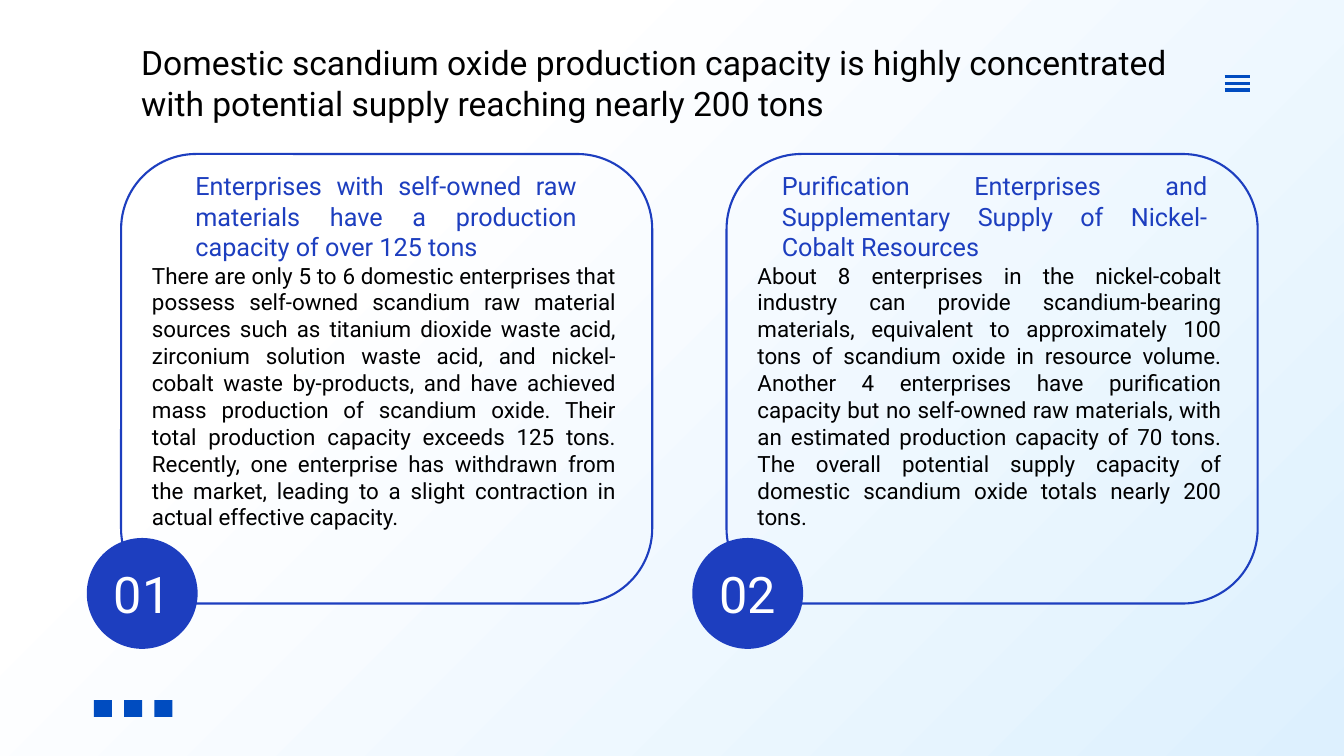
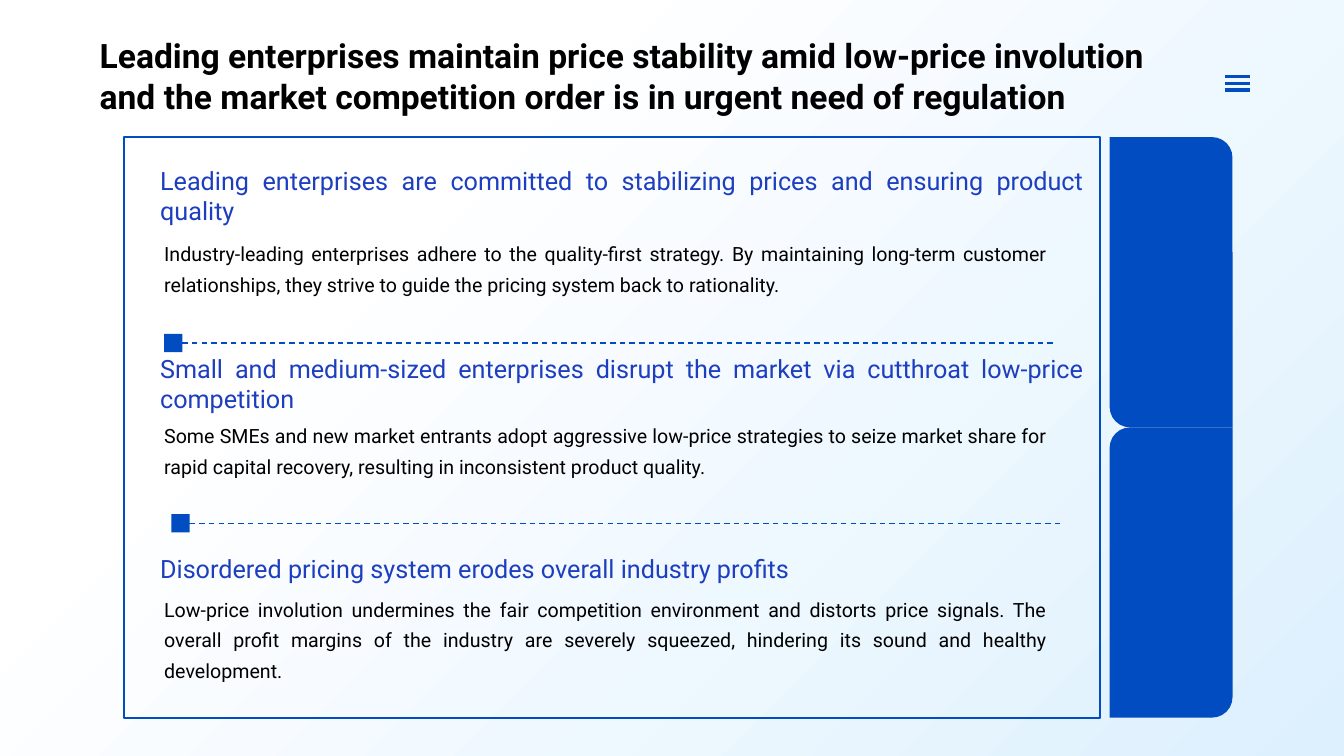
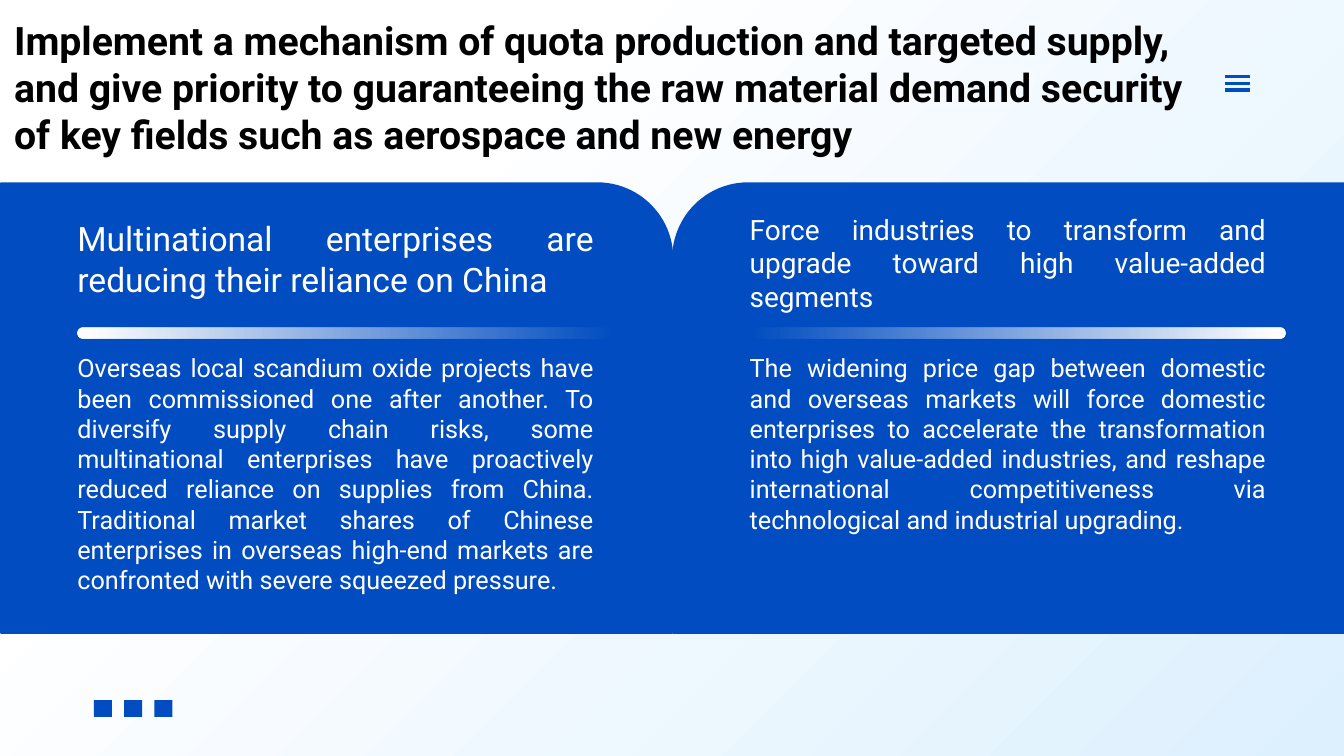
from lxml import etree
from pptx import Presentation
from pptx.dml.color import RGBColor
from pptx.enum.dml import MSO_LINE
from pptx.enum.shapes import MSO_CONNECTOR, MSO_SHAPE
from pptx.enum.text import MSO_ANCHOR, MSO_AUTO_SIZE, PP_ALIGN
from pptx.oxml.ns import qn
from pptx.util import Pt

RECT, OVAL = MSO_SHAPE.RECTANGLE, MSO_SHAPE.OVAL
ROUND, ROUND1 = MSO_SHAPE.ROUNDED_RECTANGLE, MSO_SHAPE.ROUND_1_RECTANGLE
DIAG = MSO_SHAPE.ROUND_2_DIAG_RECTANGLE
STRAIGHT, DASH = MSO_CONNECTOR.STRAIGHT, MSO_LINE.DASH
TOP, MIDDLE = MSO_ANCHOR.TOP, MSO_ANCHOR.MIDDLE
LEFT, CENTER, JUSTIFY = PP_ALIGN.LEFT, PP_ALIGN.CENTER, PP_ALIGN.JUSTIFY
NO_FIT = MSO_AUTO_SIZE.NONE

FONT = "Roboto"
CORNER = 0.167
HEX = {"blue": "004CC0", "royal": "1D3EBF", "sky": "DDF0FE",
       "white": "FFFFFF", "black": "000000"}


def rgb(name):
    return RGBColor.from_string(HEX[name])


def assign(item, values):
    for key, value in values.items():
        setattr(item, key, value)


def place(item, box):
    assign(item, dict(zip(("left", "top", "width", "height"), map(Pt, box))))


def blend(fill, root, stops, angle):
    """Fill with gradient stops given as (percent, colour, opacity percent)."""
    fill.gradient()
    fill.gradient_angle = angle
    track = next(root.iter(qn("a:gsLst")))
    for old in list(track):
        track.remove(old)
    for pos, name, alpha in stops:
        stop = etree.SubElement(track, qn("a:gs"), pos=str(pos * 1000))
        tint = etree.SubElement(stop, qn("a:srgbClr"), val=HEX[name])
        if alpha < 100:
            etree.SubElement(tint, qn("a:alpha"), val=str(alpha * 1000))


def write(frame, text, size, color="black", align=JUSTIFY, anchor=TOP,
          bold=False, spacing=None):
    assign(frame, {"text": text, "word_wrap": True, "auto_size": NO_FIT,
                   "vertical_anchor": anchor})
    for para in frame.paragraphs:
        assign(para, {"alignment": align, "line_spacing": spacing})
        for run in para.runs:
            assign(run.font, {"name": FONT, "size": Pt(size), "bold": bold})
            run.font.color.rgb = rgb(color)


def label(slide, box, text, size, **style):
    write(slide.shapes.add_textbox(*map(Pt, box)).text_frame,
          text, size, **style)


def block(slide, kind, box, fill=None, edge=None, adjust=(), flip=False):
    shape = slide.shapes.add_shape(kind, *map(Pt, box))
    shape.shadow.inherit = False
    for i, value in enumerate(adjust):
        shape.adjustments[i] = value
    if fill:
        shape.fill.solid()
        shape.fill.fore_color.rgb = rgb(fill)
    else:
        shape.fill.background()
    if edge:
        shape.line.color.rgb = rgb(edge)
        shape.line.width = Pt(1.5)
    else:
        shape.line.fill.background()
    if flip:
        next(shape.element.iter(qn("a:xfrm"))).set("flipH", "1")
    return shape


def rule(slide, left, right, y, width, dash=None):
    """Draw a level blue line."""
    link = slide.shapes.add_connector(
        STRAIGHT, Pt(left), Pt(y), Pt(right), Pt(y))
    link.line.color.rgb = rgb("blue")
    assign(link.line, {"width": Pt(width), "dash_style": dash})
    etree.SubElement(link.element.spPr, qn("a:effectLst"))


def start(deck, title, box, size=24, bold=True, dots=True):
    """Add a slide with its title, menu mark and footer dots."""
    slide = deck.slides.add_slide(deck.slide_layouts[5])
    head = slide.shapes.title
    place(head, box)
    write(head.text_frame, title, size, align=LEFT, bold=bold)
    for i in range(3):
        rule(slide, 874.8, 892.8, 54.8 + 4.7 * i, 2.5)
        if dots:
            block(slide, RECT, (67 + 21.6 * i, 500, 13, 12), "blue")
    return slide


def card(slide, box, number, head, inset, span, body):
    """Draw an outlined card with a numbered disc at its lower left."""
    left, top, _, _ = box
    block(slide, ROUND, box, edge="royal", adjust=[CORNER])
    disc = block(slide, OVAL, (left - 24.5, top + 274.3, 79.2, 79.2), "royal")
    frame = disc.text_frame
    assign(frame, {"margin_left": 0, "margin_right": 0})
    write(frame, number, 36, "white", CENTER, MIDDLE)
    label(slide, (left + inset, top + 8, span, 72.7), head, 18,
          color="royal", anchor=MIDDLE)
    label(slide, (left + 15, top + 73.4, 345.6, 201), body, 16)


def point(slide, left, top, tall, gap, head, body):
    """Write a heading and, a gap below its top, a paragraph."""
    label(slide, (left, top, 674, tall), head, 18,
          color="royal", anchor=MIDDLE)
    label(slide, (left + 2.9, top + gap, 645, 51), body, 14, spacing=1.3)


def divide(slide, left, top):
    block(slide, RECT, (left, top, 13, 13), "blue")
    rule(slide, left + 6, left + 635, top + 6.5, 1, DASH)


def tabs(slide, box):
    """Stack two blue tabs, each with two opposite round corners."""
    left, top, width, height = box
    half = height / 2
    for i, adjust in enumerate([(0, CORNER), (CORNER, 0)]):
        block(slide, DIAG, (left, top + i * half, width, half), "blue",
              adjust=adjust)


def panel(slide, box, head, size, rise, tall, body, flip):
    """Draw a filled panel: heading, fading bar and paragraph."""
    left, top, _, _ = box
    block(slide, ROUND1, box, "blue", "blue", [CORNER], flip)
    bar = block(slide, ROUND, (left + 55, top + 103, 382.3, 8),
                adjust=[0.5], flip=flip)
    blend(bar.fill, bar.element,
          [(0, "white", 100), (2, "white", 100), (100, "white", 0)], 0)
    label(slide, (left + 47.5, top + rise, 383, tall), head, size,
          color="white", anchor=MIDDLE)
    label(slide, (left + 47.5, top + 117.4, 383, 203), body, 18,
          color="white")


def supply(deck):
    slide = start(
        deck, "Domestic scandium oxide production capacity is highly "
        "concentrated\nwith potential supply reaching nearly 200 tons",
        (93.6, 26.6, 799, 65.5), bold=False)
    cards = [
        ("01", "Enterprises with self-owned raw materials have a production "
         "capacity of over 125 tons", 46, 286.6,
         "There are only 5 to 6 domestic enterprises that possess self-owned "
         "scandium raw material sources such as titanium dioxide waste acid, "
         "zirconium solution waste acid, and nickel-cobalt waste by-products, "
         "and have achieved mass production of scandium oxide. Their total "
         "production capacity exceeds 125 tons. Recently, one enterprise has "
         "withdrawn from the market, leading to a slight contraction in "
         "actual effective capacity."),
        ("02", "Purification Enterprises and Supplementary Supply of "
         "Nickel-Cobalt Resources", 32.4, 318.2,
         "About 8 enterprises in the nickel-cobalt industry can provide "
         "scandium-bearing materials, equivalent to approximately 100 tons "
         "of scandium oxide in resource volume. Another 4 enterprises have "
         "purification capacity but no self-owned raw materials, with an "
         "estimated production capacity of 70 tons. The overall potential "
         "supply capacity of domestic scandium oxide totals nearly 200 "
         "tons."),
    ]
    for i, parts in enumerate(cards):
        card(slide, (86.5 + 432.5 * i, 110, 379.4, 321.1), *parts)


def prices(deck):
    slide = start(
        deck, "Leading enterprises maintain price stability amid low-price "
        "involution and the market competition order is in urgent need of "
        "regulation", (64, 21.6, 799, 65.5), dots=False)
    left, top, width, height = 88.6, 97.9, 697, 414.7
    tabs(slide, (left + 704, top, 87.8, height))
    block(slide, RECT, (left, top, width, height), edge="blue")
    divide(slide, left + 28.6, top + 140.6)
    divide(slide, left + 33.8, top + 269.4)
    points = [
        (15.9, 51, 50.4,
         "Leading enterprises are committed to stabilizing prices and "
         "ensuring product quality",
         "Industry-leading enterprises adhere to the quality-first strategy. "
         "By maintaining long-term customer relationships, they strive to "
         "guide the pricing system back to rationality."),
        (150.5, 51, 46.1,
         "Small and medium-sized enterprises disrupt the market via "
         "cutthroat low-price competition",
         "Some SMEs and new market entrants adopt aggressive low-price "
         "strategies to seize market share for rapid capital recovery, "
         "resulting in inconsistent product quality."),
        (293.8, 28.8, 26.6,
         "Disordered pricing system erodes overall industry profits",
         "Low-price involution undermines the fair competition environment "
         "and distorts price signals. The overall profit margins of the "
         "industry are severely squeezed, hindering its sound and healthy "
         "development."),
    ]
    for drop, *parts in points:
        point(slide, left + 18.7, top + drop, *parts)


def quota(deck):
    slide = start(
        deck, "Implement a mechanism of quota production and targeted "
        "supply, and give priority to guaranteeing the raw material demand "
        "security of key fields such as aerospace and new energy",
        (2.9, 7.9, 872, 108.7), size=28)
    panels = [
        ("Multinational enterprises are reducing their reliance on China",
         24, 21, 65.5,
         "Overseas local scandium oxide projects have been commissioned one "
         "after another. To diversify supply chain risks, some multinational "
         "enterprises have proactively reduced reliance on supplies from "
         "China. Traditional market shares of Chinese enterprises in "
         "overseas high-end markets are confronted with severe squeezed "
         "pressure."),
        ("Force industries to transform and upgrade toward high value-added "
         "segments", 20, 16.6, 80,
         "The widening price gap between domestic and overseas markets will "
         "force domestic enterprises to accelerate the transformation into "
         "high value-added industries, and reshape international "
         "competitiveness via technological and industrial upgrading."),
    ]
    for i, parts in enumerate(panels):
        panel(slide, (0.7 + 480.2 * i, 131, 479.5, 321), *parts, flip=i == 1)


def main():
    deck = Presentation()
    assign(deck, {"slide_width": Pt(960), "slide_height": Pt(540)})
    master = deck.slide_master
    blend(master.background.fill, master.element,
          [(0, "white", 100), (28, "white", 100), (100, "sky", 100)], 315)
    for build in (supply, prices, quota):
        build(deck)
    deck.save("out.pptx")


if __name__ == "__main__":
    main()
